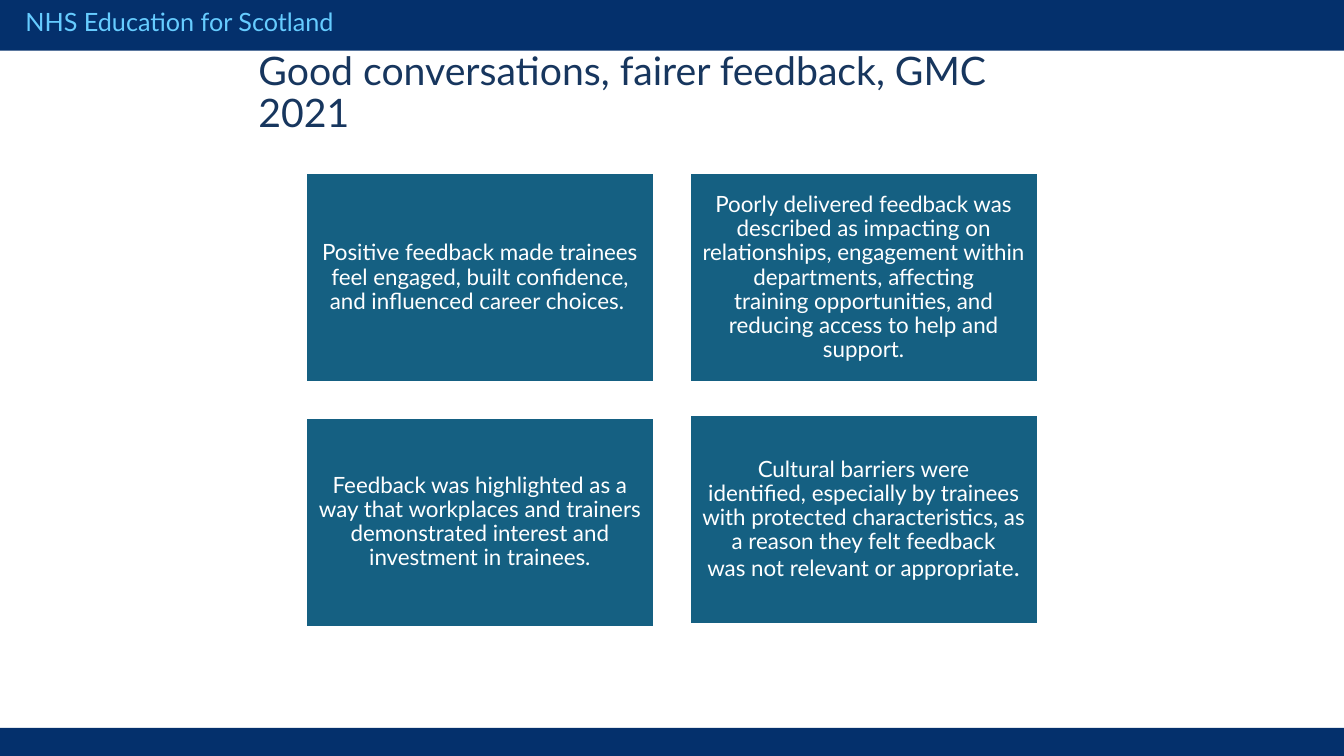
from dataclasses import dataclass

from pptx import Presentation
from pptx import util as u
from pptx.dml.color import RGBColor
from pptx.enum import shapes, text

FONT = "Lato"
COLOURS = {
    "band": "04306C",
    "header": "66CCFF",
    "title": "17365E",
    "card": "156082",
    "white": "FFFFFF",
}
SLIDE_WIDTH, SLIDE_HEIGHT = 33.87, 19.05
CARD_WIDTH, CARD_HEIGHT = 8.79, 5.28
CARD_LEFT, CARD_PITCH = 7.7, 9.67
CARD_INSET = 0.18
TIE, HARD_SPACE = "~", chr(160)  # a tie in a message keeps two words on one line


@dataclass
class Band:
    top: float
    height: float


@dataclass
class Card:
    column: int
    top: float
    message: str
    ending: str = ""  # closing mark in a larger size


BANDS = [Band(0, 1.28), Band(18.34, SLIDE_HEIGHT - 18.34)]
CARDS = [
    Card(0, 4.36, "Positive feedback made trainees feel engaged, built~confidence, "
                  "and influenced career choices.~"),
    Card(1, 4.36, "Poorly delivered feedback was described as impacting~on "
                  "relationships, engagement within departments,~affecting "
                  "training~opportunities, and reducing access~to help and support."),
    Card(0, 10.52, "Feedback was highlighted as a way that workplaces~and trainers "
                   "demonstrated interest and investment in~trainees."),
    Card(1, 10.46, "Cultural barriers were identified,~especially by~trainees with "
                   "protected characteristics, as a reason~they felt feedback "
                   "was~not relevant or appropriate", "."),
]


def colour(name: str) -> RGBColor:
    return RGBColor.from_string(COLOURS[name])


def style(font, size: float, colour_name: str) -> None:
    font.name = FONT
    font.size = u.Pt(size)
    font.color.rgb = colour(colour_name)


def add_rectangle(slide, left: float, top: float, width: float, height: float, fill: str):
    rectangle = slide.shapes.add_shape(
        shapes.MSO_SHAPE.RECTANGLE, u.Cm(left), u.Cm(top), u.Cm(width), u.Cm(height))
    rectangle.shadow.inherit = False
    rectangle.fill.solid()
    rectangle.fill.fore_color.rgb = colour(fill)
    rectangle.line.fill.background()
    return rectangle


def add_band(slide, band: Band) -> None:
    add_rectangle(slide, 0, band.top, SLIDE_WIDTH, band.height, "band")


def add_header(slide, wording: str) -> None:
    header = slide.shapes.add_textbox(u.Cm(0.39), u.Cm(0.03), u.Cm(14.38), u.Cm(1.02))
    header.text_frame.word_wrap = True
    line = header.text_frame.paragraphs[0]
    line.text = wording
    style(line.font, 18, "header")


def set_title(slide, wording: str) -> None:
    title = slide.shapes.title
    title.left, title.top = u.Cm(6.26), u.Cm(1.4)
    title.width, title.height = u.Cm(21.34), u.Cm(1.93)
    frame = title.text_frame
    frame.auto_size = text.MSO_AUTO_SIZE.NONE
    frame.word_wrap = True
    frame.vertical_anchor = text.MSO_ANCHOR.MIDDLE
    heading = frame.paragraphs[0]
    heading.text = wording
    heading.alignment = text.PP_ALIGN.LEFT
    heading.line_spacing = 0.9
    heading.space_after = u.Pt(6)
    style(heading.font, 28, "title")


def add_card(slide, card: Card) -> None:
    left = CARD_LEFT + card.column * CARD_PITCH
    box = add_rectangle(slide, left, card.top, CARD_WIDTH, CARD_HEIGHT, "card")
    box.line.color.rgb = colour("white")
    box.line.width = u.Pt(2)
    frame = box.text_frame
    frame.word_wrap = True
    frame.vertical_anchor = text.MSO_ANCHOR.MIDDLE
    frame.margin_left = frame.margin_right = u.Cm(CARD_INSET)
    frame.margin_top = frame.margin_bottom = u.Cm(CARD_INSET)
    message = frame.paragraphs[0]
    message.text = card.message.replace(TIE, HARD_SPACE)
    message.alignment = text.PP_ALIGN.CENTER
    message.line_spacing = 0.9
    style(message.font, 16, "white")
    if card.ending:
        ending = message.add_run()
        ending.text = card.ending
        ending.font.size = u.Pt(18)


def main() -> None:
    deck = Presentation()
    deck.slide_width, deck.slide_height = u.Cm(SLIDE_WIDTH), u.Cm(SLIDE_HEIGHT)
    slide = deck.slides.add_slide(deck.slide_layouts[5])

    # Bands and header
    for band in BANDS:
        add_band(slide, band)
    add_header(slide, "NHS Education for Scotland")

    # Title and feedback findings
    set_title(slide, "Good conversations, fairer feedback, GMC 2021")
    for card in CARDS:
        add_card(slide, card)

    deck.save("out.pptx")


if __name__ == "__main__":
    main()
